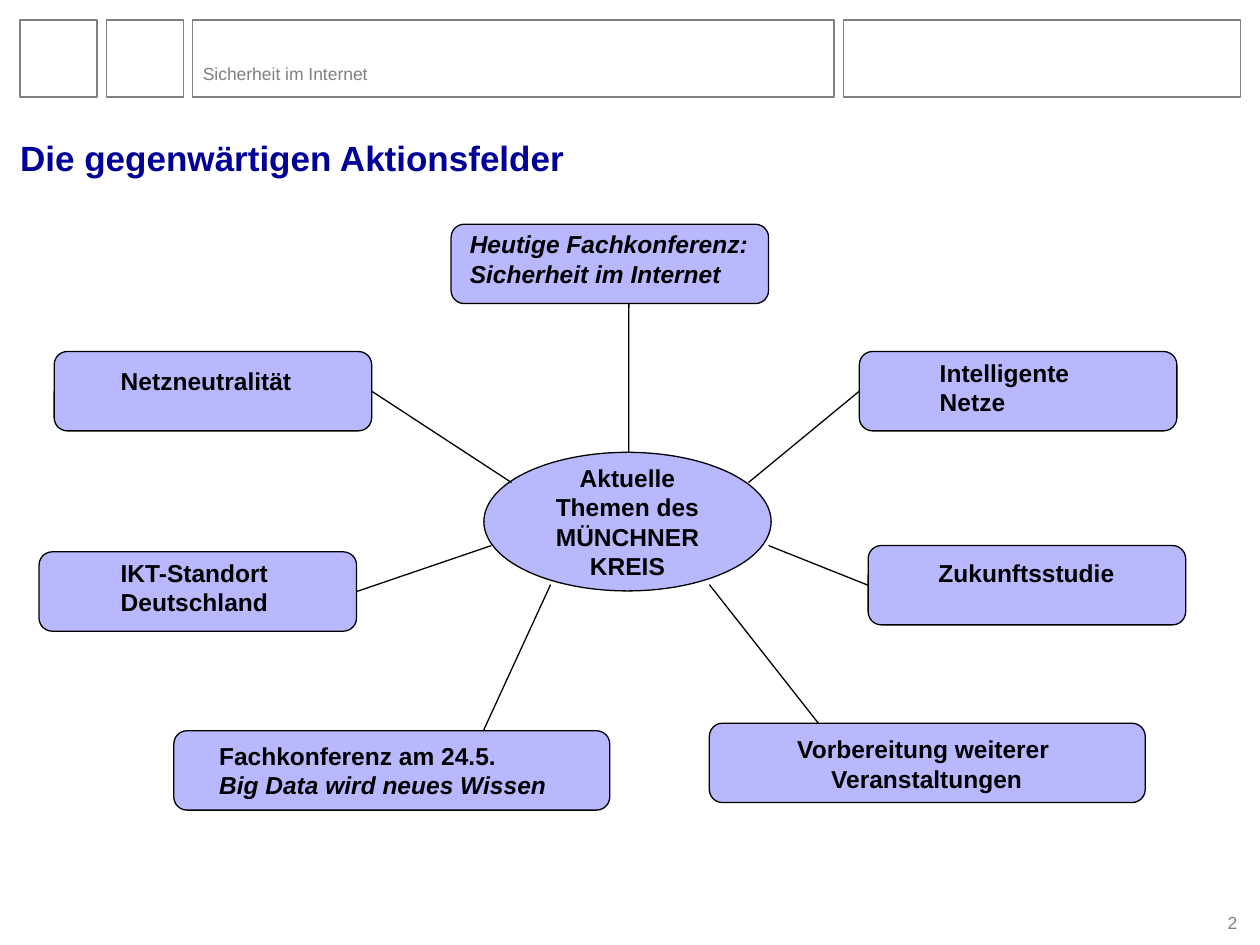
from lxml.etree import SubElement
from pptx import Presentation
from pptx.dml.color import RGBColor
from pptx.enum.shapes import MSO_CONNECTOR, MSO_SHAPE
from pptx.enum.text import MSO_ANCHOR, PP_ALIGN
from pptx.oxml.ns import qn
from pptx.util import Inches, Pt

HUES = {"ink": "000000", "grey": "808080", "navy": "000099", "lilac": "B8B8FF"}
WIDE, HIGH = Inches(10), Inches(7.5)
COLS, ROWS = 100, 75
AXIS = 50
NODE_H = 6.3
SLIM, BROAD = 25.2, 34.6
LEFT, MID = PP_ALIGN.LEFT, PP_ALIGN.CENTER

NODES = [
    {"at": (35.8, 17.8), "wide": SLIM, "text": (36.3, 17.7, 24.9, 8.1),
     "lines": ["Heutige Fachkonferenz:", "Sicherheit im Internet"], "slant": (0, 1),
     "port": (0.56, 1), "hub": (-0.1, 35.9)},
    {"at": (4.3, 27.9), "wide": SLIM, "text": (8.6, 28.6, 16.1, 5.7),
     "lines": ["Netzneutralität"], "port": (1, 0.5), "hub": (-9.4, 38.3)},
    {"at": (3.1, 43.8), "wide": SLIM, "text": (8.6, 43.8, 14.3, 8.1),
     "lines": ["IKT-Standort", "Deutschland"], "port": (1, 0.5), "hub": (-11, 43.3)},
    {"at": (13.8, 58), "wide": BROAD, "text": (16.4, 58.3, 28.1, 5.7),
     "lines": ["Fachkonferenz am 24.5.", "Big Data wird neues Wissen"], "slant": (1,),
     "port": (0.71, 0), "hub": (-6.3, 46.4)},
    {"at": (68.2, 27.9), "wide": SLIM, "text": (73.6, 27.9, 12.9, 8.1),
     "lines": ["Intelligente", "Netze"], "port": (0, 0.5), "hub": (9.4, 38.3)},
    {"at": (68.9, 43.3), "wide": SLIM, "text": (73.5, 43.8, 16, 5.7),
     "lines": ["Zukunftsstudie"], "port": (0, 0.5), "hub": (11, 43.3)},
    {"at": (56.3, 57.4), "wide": BROAD, "text": (62.2, 57.8, 22.7, 5.7),
     "lines": ["Vorbereitung weiterer \vVeranstaltungen"], "align": MID,
     "port": (0.25, 0), "hub": (6.3, 46.4)},
]


def scale(x, y):
    return round(x * WIDE / COLS), round(y * HIGH / ROWS)


def span(box):
    return scale(*box[:2]) + scale(*box[2:])


def tint(name):
    return RGBColor.from_string(HUES[name])


def write(frame, lines, size=14, hue="ink", bold=True, slant=(), align=LEFT,
          anchor=MSO_ANCHOR.TOP, inset=None, wrap=True, pitch=None):
    frame.word_wrap = wrap
    frame.vertical_anchor = anchor
    if inset is not None:
        frame.margin_left = frame.margin_right = Inches(inset)
        frame.margin_top = frame.margin_bottom = Inches(inset)
    for i, line in enumerate(lines):
        para = frame.paragraphs[0] if i == 0 else frame.add_paragraph()
        para.text = line
        para.alignment = align
        if pitch:
            para.line_spacing = pitch
        for run in para.runs:
            font = run.font
            font.name, font.size = "Arial", Pt(size)
            font.bold, font.italic = bold, i in slant
            font.color.rgb = tint(hue)


def label(page, box, lines, **form):
    write(page.shapes.add_textbox(*span(box)).text_frame, lines, **form)


def shape(page, kind, box, fill=None, line="ink"):
    item = page.shapes.add_shape(kind, *span(box))
    item.shadow.inherit = False
    if fill:
        item.fill.solid()
        item.fill.fore_color.rgb = tint(fill)
    else:
        item.fill.background()
    item.line.color.rgb = tint(line)
    item.line.width = Pt(0.75)
    return item


def link(page, start, end):
    line = page.shapes.add_connector(MSO_CONNECTOR.STRAIGHT, *scale(*start), *scale(*end))
    line.line.color.rgb = tint("ink")
    line.line.width = Pt(0.75)
    SubElement(line._element.spPr, qn("a:effectLst"))


def header(page, box):
    x, y, _, high = box
    gap = 0.75
    for wide in (high, high, 50.9, 31.5):
        shape(page, MSO_SHAPE.RECTANGLE, (x, y, wide, high), line="grey")
        x += wide + gap
    label(page, (box[0] + 14.5, y + 1, 35.5, 4.1), ["Sicherheit im Internet"], size=10,
          hue="grey", bold=False, anchor=MSO_ANCHOR.BOTTOM, inset=0, pitch=0.95)


def title(page, box):
    item = page.shapes.title
    item.left, item.top, item.width, item.height = span(box)
    write(item.text_frame, ["Die gegenwärtigen Aktionsfelder"], size=20, hue="navy",
          anchor=MSO_ANCHOR.BOTTOM, inset=0)


def hub(page, box):
    item = shape(page, MSO_SHAPE.OVAL, box, fill="lilac")
    write(item.text_frame, ["Aktuelle Themen des MÜNCHNER KREIS"], align=MID,
          anchor=MSO_ANCHOR.MIDDLE, inset=0.04)


def node(page, box, data):
    x, y, wide, high = box
    shape(page, MSO_SHAPE.ROUNDED_RECTANGLE, box, fill="lilac")
    label(page, data["text"], data["lines"], slant=data.get("slant", ()),
          align=data.get("align", LEFT), wrap=False)
    across, down = data["port"]
    off, row = data["hub"]
    link(page, (AXIS + off, row), (x + across * wide, y + down * high))


def footer(page, box):
    label(page, box, ["2"], size=10, hue="grey", bold=False, align=PP_ALIGN.RIGHT, inset=0)


def main():
    deck = Presentation()
    deck.slide_width, deck.slide_height = WIDE, HIGH
    page = deck.slides.add_slide(deck.slide_layouts[5])
    header(page, (1.6, 1.6, 96.8, 6.1))
    title(page, (1.6, 8.4, 96.8, 5.8))
    hub(page, (38.4, 35.9, 22.8, 11))
    for data in NODES:
        node(page, (*data["at"], data["wide"], NODE_H), data)
    footer(page, (94.6, 72.4, 3.6, 2.3))
    deck.save("out.pptx")


if __name__ == "__main__":
    main()
